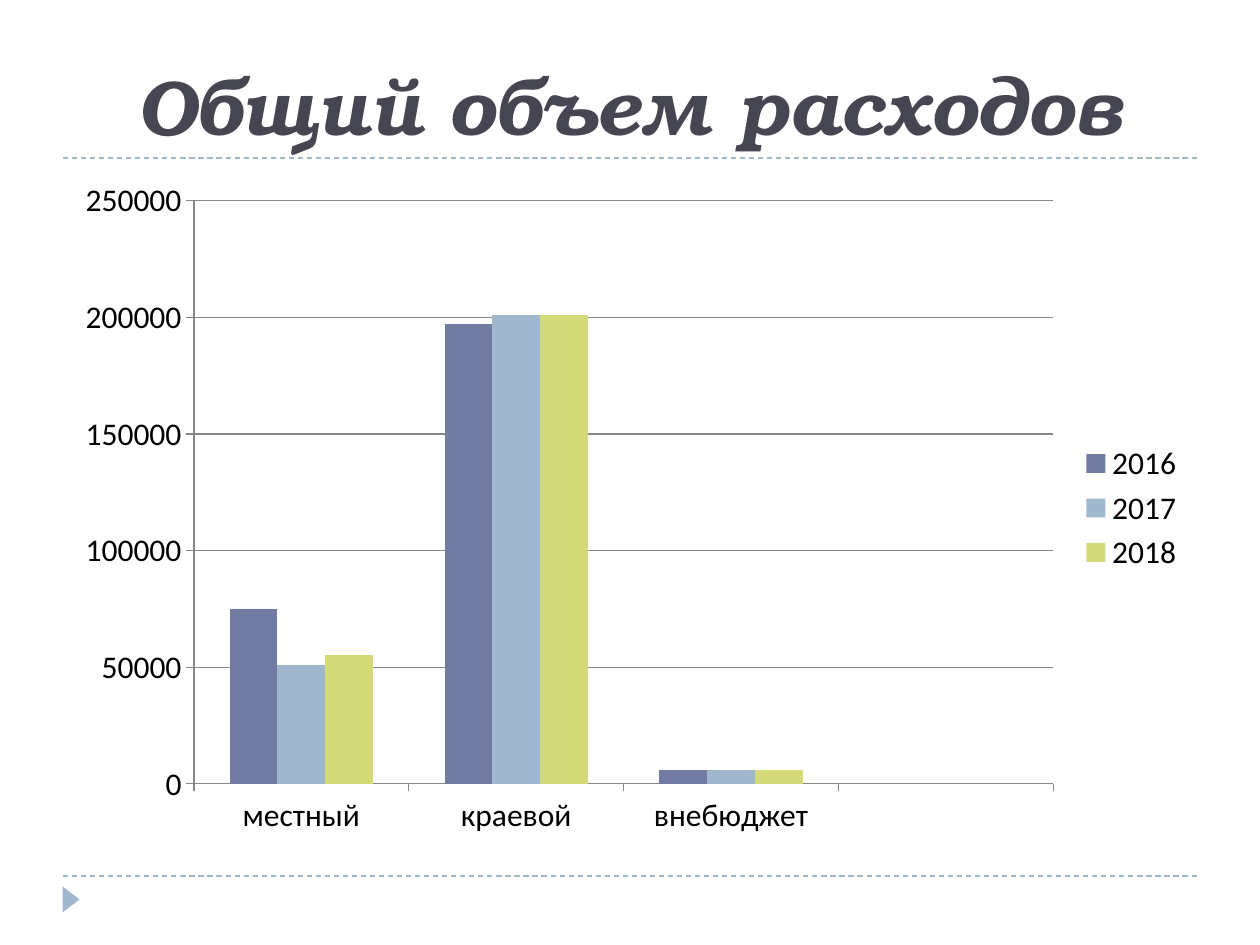
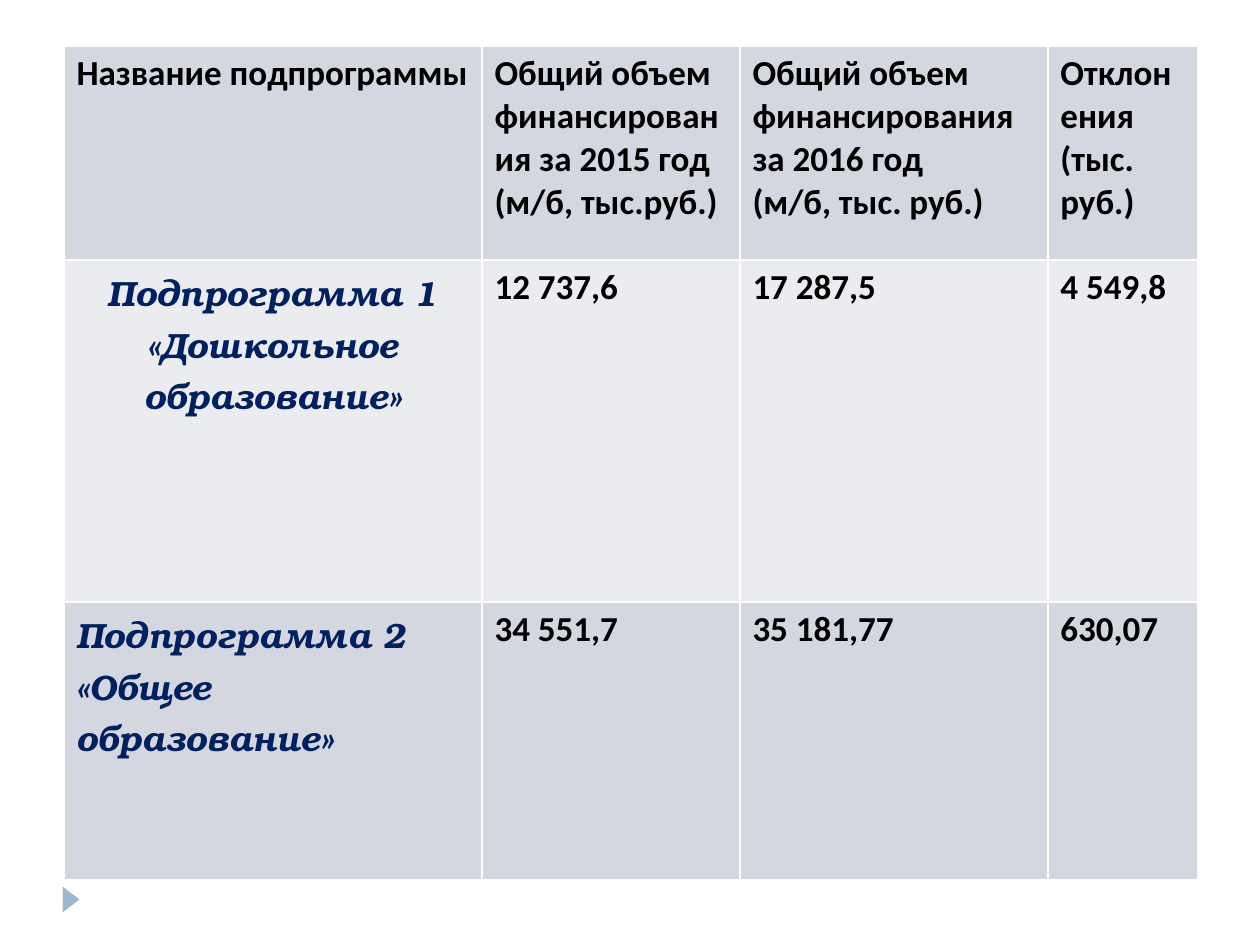
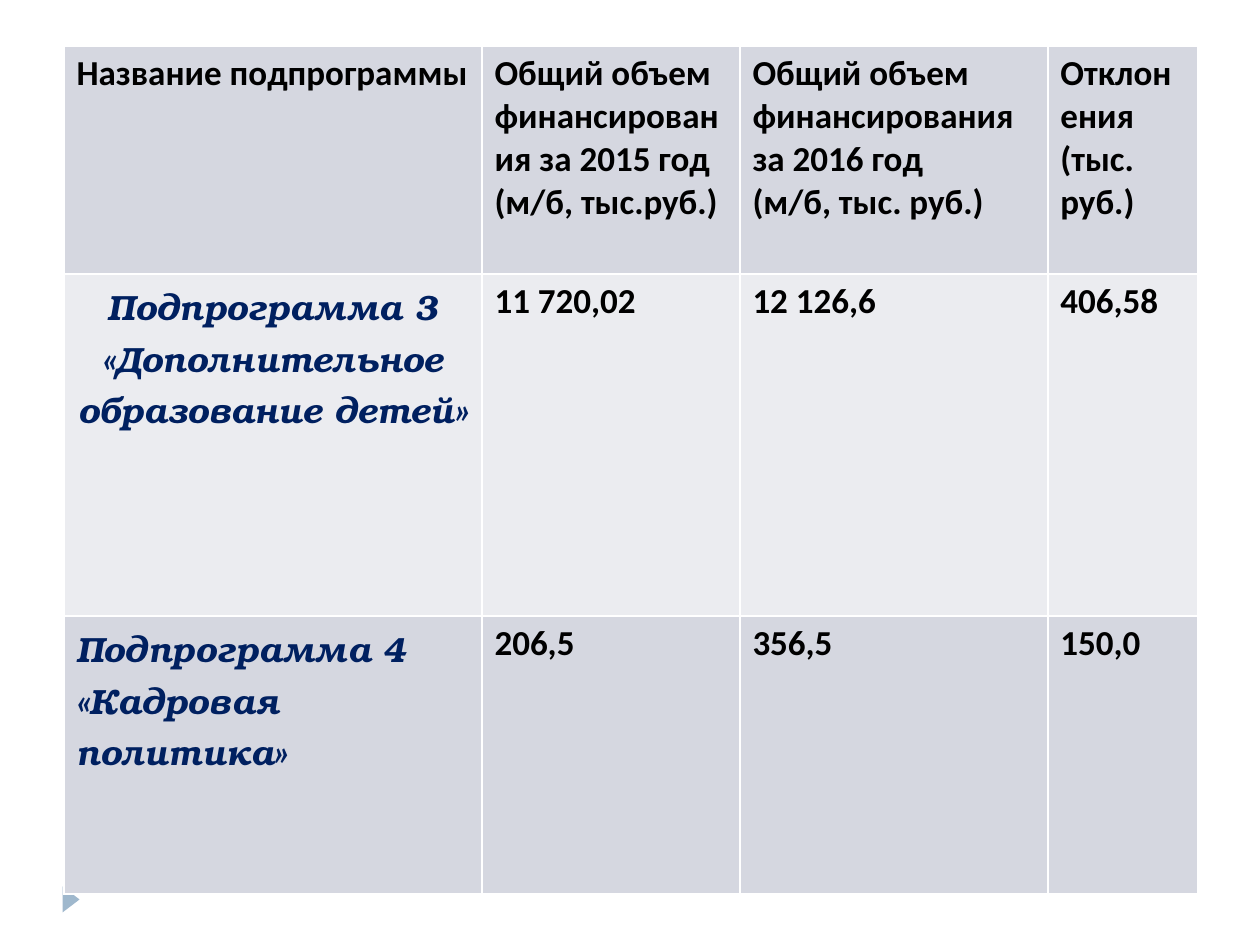
from dataclasses import dataclass

import lxml.etree
import pptx
import pptx.chart.data
import pptx.dml.color
import pptx.enum.chart
import pptx.enum.dml
import pptx.enum.shapes
import pptx.enum.text
import pptx.oxml.ns
import pptx.util

EMU_PER_PX = 914400 / 126
BODY_FONT = "Calibri"
DISPLAY_FONT = "TeX Gyre Bonum"
COLORS = {
    "title": "464653",
    "accent": "9FB8CD",
    "text": "000000",
    "program": "002060",
    "band_dark": "D5D7E0",
    "band_light": "EBECF0",
    "border": "FFFFFF",
    "grid": "868686",
}
CENTER = pptx.enum.text.PP_ALIGN.CENTER
LEFT = pptx.enum.text.PP_ALIGN.LEFT

RULE_LEFT, RULE_RIGHT = 63, 1197
RULE_TOPS = (876, 158)
COLUMN_WIDTHS = (418, 258, 308, 150)
PROGRAM_ROW_HEIGHTS = (342, 278)
HEADINGS = (
    "Название подпрограммы",
    "Общий объем финансирования за 2015 год\n(м/б, тыс.руб.)",
    "Общий объем финансирования за 2016 год\n(м/б, тыс. руб.)",
    "Отклонения (тыс. руб.)",
)


@dataclass(frozen=True)
class TextStyle:
    size: int
    color: str
    font: str = BODY_FONT
    bold: bool = False
    italic: bool = False


@dataclass(frozen=True)
class YearSpending:
    year: str
    amounts: tuple[int | None, ...]
    color: str


@dataclass(frozen=True)
class ProgramTable:
    header_height: int
    programs: tuple[tuple[str, str, str, str], ...]


TITLE = TextStyle(44, "title", DISPLAY_FONT, bold=True, italic=True)
CHART_TEXT = TextStyle(18, "text")
CELL = TextStyle(20, "text", bold=True)
PROGRAM = TextStyle(20, "program", DISPLAY_FONT, bold=True, italic=True)

SOURCES = ("местный", "краевой", "внебюджет", "")
SPENDING = (
    YearSpending("2016", (75000, 197000, 6000, None), "727CA3"),
    YearSpending("2017", (51000, 201000, 6000, None), "9FB8CD"),
    YearSpending("2018", (55000, 201000, 6000, None), "D2DA7A"),
)
PROGRAM_TABLES = (
    ProgramTable(214, (
        ("Подпрограмма 1 «Дошкольное образование»", "12 737,6", "17 287,5", "4 549,8"),
        ("Подпрограмма 2 «Общее образование»", "34 551,7", "35 181,77", "630,07"),
    )),
    ProgramTable(228, (
        ("Подпрограмма 3 «Дополнительное образование детей»", "11 720,02", "12 126,6", "406,58"),
        ("Подпрограмма 4\n«Кадровая политика»", "206,5", "356,5", "150,0"),
    )),
)


def px(length: int) -> pptx.util.Emu:
    return pptx.util.Emu(round(length * EMU_PER_PX))


def rgb(value: str) -> pptx.dml.color.RGBColor:
    return pptx.dml.color.RGBColor.from_string(value)


def style_font(font, style: TextStyle) -> None:
    font.name = style.font
    font.size = pptx.util.Pt(style.size)
    font.bold = style.bold
    font.italic = style.italic
    font.color.rgb = rgb(COLORS[style.color])


def write(frame, text: str, style: TextStyle, align=LEFT) -> None:
    frame.text = text
    for paragraph in frame.paragraphs:
        paragraph.alignment = align
        style_font(paragraph.font, style)


def add_base_slide(deck):
    """Add a blank slide with the shared dashed rules and corner marker."""
    slide = deck.slides.add_slide(deck.slide_layouts[6])
    for top in RULE_TOPS:
        rule = slide.shapes.add_connector(
            pptx.enum.shapes.MSO_CONNECTOR.STRAIGHT,
            px(RULE_LEFT), px(top), px(RULE_RIGHT), px(top))
        rule.line.color.rgb = rgb(COLORS["accent"])
        rule.line.width = pptx.util.Pt(0.75)
        rule.line.dash_style = pptx.enum.dml.MSO_LINE.DASH
        lxml.etree.SubElement(rule._element.spPr, pptx.oxml.ns.qn("a:effectLst"))
    marker = slide.shapes.add_shape(
        pptx.enum.shapes.MSO_SHAPE.ISOSCELES_TRIANGLE, px(58), px(891), px(26), px(17))
    marker.rotation = 90
    marker.shadow.inherit = False
    marker.fill.solid()
    marker.fill.fore_color.rgb = rgb(COLORS["accent"])
    marker.line.fill.background()
    return slide


def add_title(slide, text: str) -> None:
    frame = slide.shapes.add_textbox(px(63), px(21), px(1134), px(136)).text_frame
    frame.word_wrap = True
    frame.vertical_anchor = pptx.enum.text.MSO_ANCHOR.BOTTOM
    write(frame, text, TITLE, CENTER)


def add_spending_chart(slide) -> None:
    spending = pptx.chart.data.CategoryChartData()
    spending.categories = SOURCES
    for entry in SPENDING:
        spending.add_series(entry.year, entry.amounts)
    chart = slide.shapes.add_chart(
        pptx.enum.chart.XL_CHART_TYPE.COLUMN_CLUSTERED,
        px(63), px(168), px(1134), px(680), spending).chart
    style_font(chart.font, CHART_TEXT)
    chart.has_title = False
    chart.has_legend = True
    chart.legend.position = pptx.enum.chart.XL_LEGEND_POSITION.RIGHT
    chart.legend.include_in_layout = False

    plot = chart.plots[0]
    plot.vary_by_categories = False
    plot.gap_width = 150
    for entry, series in zip(SPENDING, plot.series):
        series.format.fill.solid()
        series.format.fill.fore_color.rgb = rgb(entry.color)

    amounts = chart.value_axis
    amounts.minimum_scale, amounts.maximum_scale, amounts.major_unit = 0, 250000, 50000
    amounts.has_major_gridlines = True
    for line in (amounts.format.line, chart.category_axis.format.line,
                 amounts.major_gridlines.format.line):
        line.color.rgb = rgb(COLORS["grid"])
        line.width = pptx.util.Pt(0.75)
    for axis in (amounts, chart.category_axis):
        axis.major_tick_mark = pptx.enum.chart.XL_TICK_MARK.OUTSIDE


def paint_cell(cell, color: str) -> None:
    """Fill a cell and give it white borders on all sides."""
    cell.fill.solid()
    cell.fill.fore_color.rgb = rgb(COLORS[color])
    qn = pptx.oxml.ns.qn
    properties = cell._tc.get_or_add_tcPr()
    for index, side in enumerate(("lnL", "lnR", "lnT", "lnB")):
        border = lxml.etree.Element(qn(f"a:{side}"), w=str(pptx.util.Pt(1)))
        fill = lxml.etree.SubElement(border, qn("a:solidFill"))
        lxml.etree.SubElement(fill, qn("a:srgbClr"), val=COLORS["border"])
        properties.insert(index, border)


def add_program_table(slide, content: ProgramTable) -> None:
    heights = (content.header_height, *PROGRAM_ROW_HEIGHTS)
    table = slide.shapes.add_table(
        len(heights), len(COLUMN_WIDTHS), px(64), px(46),
        px(sum(COLUMN_WIDTHS)), px(sum(heights))).table
    for column, width in zip(table.columns, COLUMN_WIDTHS):
        column.width = px(width)
    for row, height in zip(table.rows, heights):
        row.height = px(height)
    for r, texts in enumerate((HEADINGS, *content.programs)):
        for c, text in enumerate(texts):
            cell = table.cell(r, c)
            is_program = r > 0 and c == 0
            write(cell.text_frame, text, PROGRAM if is_program else CELL,
                  CENTER if is_program and r == 1 else LEFT)
            paint_cell(cell, "band_light" if r % 2 else "band_dark")


def main() -> None:
    deck = pptx.Presentation()
    deck.slide_width, deck.slide_height = px(1260), px(945)

    # Total spending by source
    overview = add_base_slide(deck)
    add_title(overview, "Общий объем расходов")
    add_spending_chart(overview)

    # Funding of each subprogram
    for content in PROGRAM_TABLES:
        add_program_table(add_base_slide(deck), content)

    deck.save("out.pptx")


if __name__ == "__main__":
    main()
